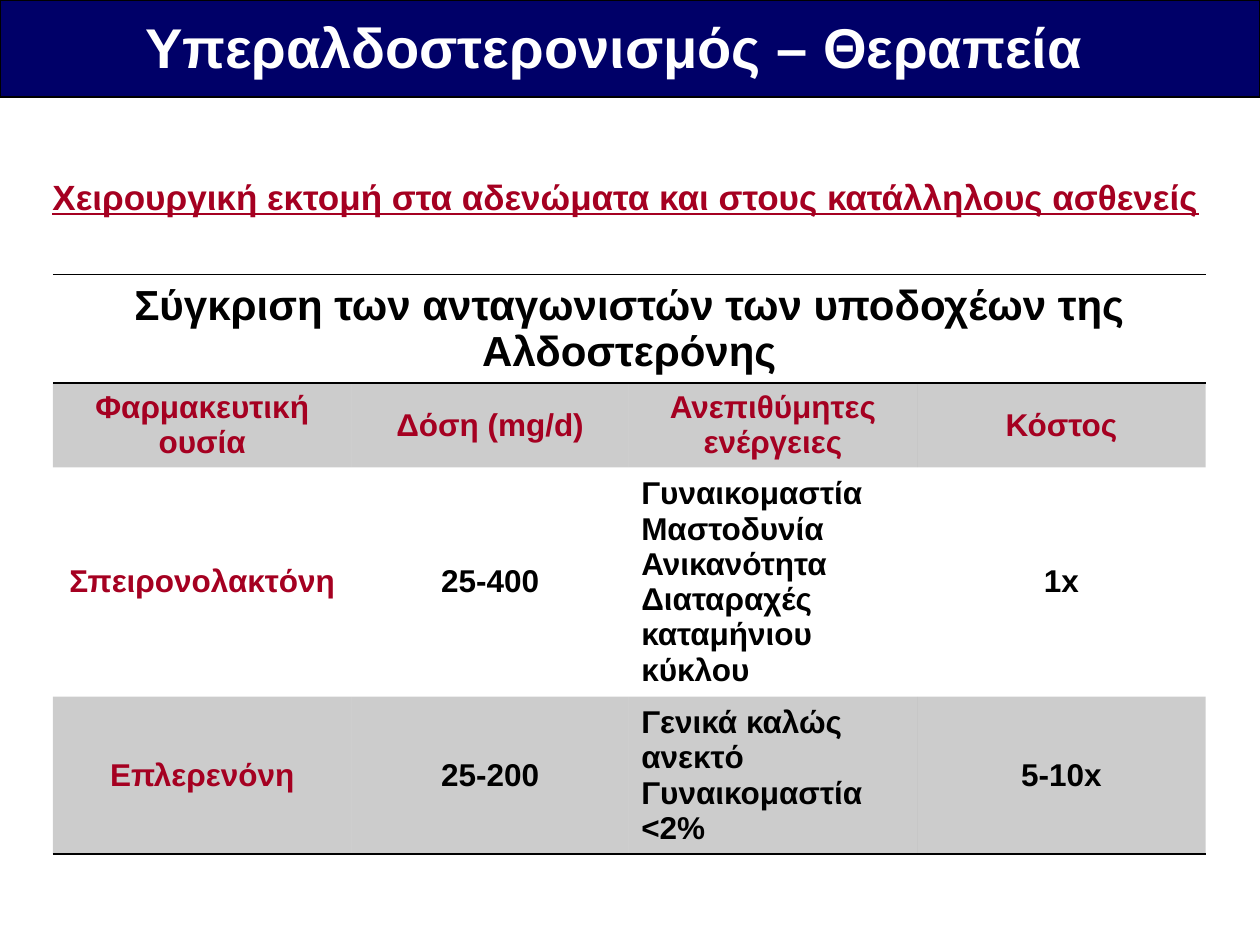
from lxml import etree
from pptx import Presentation
from pptx.dml.color import RGBColor
from pptx.enum import text
from pptx.enum import shapes
from pptx.oxml import ns
from pptx.util import Emu, Inches, Pt

NAVY, CRIMSON, BLACK, WHITE = "000068", "A50021", "000000", "FFFFFF"
PLAIN_TABLE = "{2D5ABB26-0587-4C30-8999-92F81FD0307C}"
CENTER, LEFT = text.PP_ALIGN.CENTER, text.PP_ALIGN.LEFT


def color(value):
    return RGBColor.from_string(value)


class Deck:
    font = "Arial"
    columns, rows = 10, 7.5

    def __init__(self):
        self.show = Presentation()
        self.show.slide_width, self.show.slide_height = Inches(10), Inches(7.5)
        self.slide = self.show.slides.add_slide(self.show.slide_layouts[6])

    def across(self, count):
        return Emu(round(self.show.slide_width * count / self.columns))

    def down(self, count):
        return Emu(round(self.show.slide_height * count / self.rows))

    def place(self, left, top, width, height):
        return self.across(left), self.down(top), self.across(width), self.down(height)

    def fill_text(self, frame, lines, size, ink, align=CENTER, underline=None):
        look = {"name": self.font, "size": Pt(size), "bold": True, "underline": underline}
        for index, line in enumerate(lines):
            paragraph = frame.add_paragraph() if index else frame.paragraphs[0]
            paragraph.alignment = align
            run = paragraph.add_run()
            run.text = line
            for key, value in look.items():
                setattr(run.font, key, value)
            run.font.color.rgb = color(ink)

    def band(self, home, spot, fill, line):
        bar = home.add_shape(shapes.MSO_SHAPE.RECTANGLE, *self.place(*spot))
        bar.shadow.inherit = False
        bar.fill.solid()
        bar.fill.fore_color.rgb = color(fill)
        bar.line.color.rgb = color(line)
        bar.line.width = Pt(0.75)

    def label(self, home, spot, line, size, ink, indent=0, **look):
        frame = home.add_textbox(*self.place(*spot)).text_frame
        frame.word_wrap = True
        frame.auto_size = text.MSO_AUTO_SIZE.SHAPE_TO_FIT_TEXT
        frame.margin_right += self.across(indent)
        self.fill_text(frame, [line], size, ink, **look)
        return frame

    def table(self, spot, widths, heights):
        frame = self.slide.shapes.add_table(len(heights), len(widths), *self.place(*spot))
        frame._element.find(".//" + ns.qn("a:tableStyleId")).text = PLAIN_TABLE
        grid = frame.table
        for column, width in zip(grid.columns, widths):
            column.width = self.across(width)
        for row, height in zip(grid.rows, heights):
            row.height = self.down(height)
        return grid

    def cell(self, cell, lines, size, ink, align, shaded, edges):
        cell.vertical_anchor = text.MSO_ANCHOR.MIDDLE
        if lines:
            self.fill_text(cell.text_frame, lines, size, ink, align)
        if shaded:
            cell.fill.solid()
            cell.fill.fore_color.rgb = color(BLACK)
            tint = cell._tc.tcPr.find(".//" + ns.qn("a:srgbClr"))
            etree.SubElement(tint, ns.qn("a:alpha"), val="20000")
        else:
            cell.fill.background()
        for position, edge in enumerate(edges):
            border = etree.Element(ns.qn("a:ln" + edge), w=str(Pt(1)))
            paint = etree.SubElement(border, ns.qn("a:solidFill"))
            etree.SubElement(paint, ns.qn("a:srgbClr"), val=BLACK)
            cell._tc.tcPr.insert(position, border)


def main():
    deck = Deck()
    comparison = [
        [["Σύγκριση των ανταγωνιστών των υποδοχέων της Αλδοστερόνης"], [], [], []],
        [["Φαρμακευτική ουσία"], ["Δόση (mg/d)"], ["Ανεπιθύμητες ενέργειες"], ["Κόστος"]],
        [["Σπειρονολακτόνη"], ["25-400"],
         ["Γυναικομαστία", "Μαστοδυνία", "Ανικανότητα", "Διαταραχές καταμήνιου κύκλου"], ["1x"]],
        [["Επλερενόνη"], ["25-200"], ["Γενικά καλώς ανεκτό", "Γυναικομαστία <2%"], ["5-10x"]],
    ]
    antagonists = deck.table((0.42, 2.18, 9.15, 4.6),
                             [2.37, 2.2, 2.29, 2.29], [0.86, 0.67, 1.82, 1.25])
    antagonists.cell(0, 0).merge(antagonists.cell(0, 3))
    edges = {0: "TB", 3: "B"}
    for r, entries in enumerate(comparison):
        for c, lines in enumerate(entries):
            ink = CRIMSON if r == 1 or (r > 1 and c == 0) else BLACK
            align = LEFT if r > 1 and c == 2 else CENTER
            deck.cell(antagonists.cell(r, c), lines, 18 if r else 24, ink, align,
                      shaded=r % 2 == 1, edges=edges.get(r, ""))

    header = deck.slide.shapes.add_group_shape().shapes
    deck.band(header, (0, 0, 10, 0.77), NAVY, BLACK)
    title = deck.label(header, (0, 0.05, 10, 0.64), "Υπεραλδοστερονισμός – Θεραπεία",
                       32, WHITE, indent=0.25)
    title.paragraphs[0].space_after = Pt(6)
    deck.label(deck.slide.shapes, (0.2, 1.34, 9.53, 0.44),
               "Χειρουργική εκτομή στα αδενώματα και στους κατάλληλους ασθενείς",
               20, CRIMSON, underline=True)
    deck.show.save("out.pptx")


if __name__ == "__main__":
    main()
